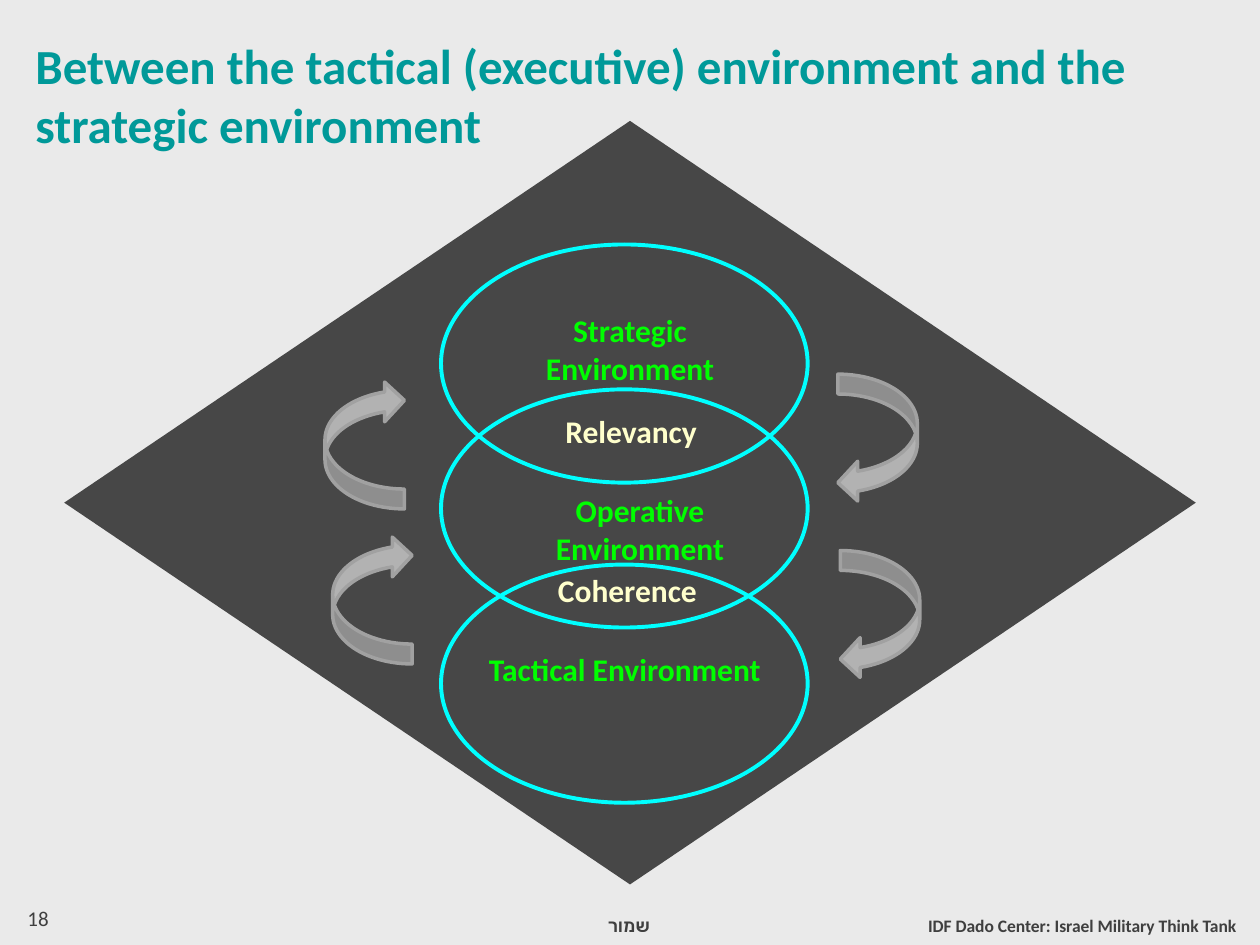
from pptx import Presentation
from pptx.dml.color import RGBColor
from pptx.enum.shapes import MSO_SHAPE
from pptx.enum.text import MSO_ANCHOR, PP_ALIGN
from pptx.util import Pt

DIAMOND = MSO_SHAPE.DIAMOND
ELLIPSE = MSO_SHAPE.OVAL
CURVED_ARROW = MSO_SHAPE.CURVED_LEFT_ARROW
LEFT, CENTER, RIGHT = PP_ALIGN.LEFT, PP_ALIGN.CENTER, PP_ALIGN.RIGHT
TOP = MSO_ANCHOR.TOP

FONT = "Calibri"
TEAL, GREEN, CREAM, CYAN = "009999", "00FF00", "FFFFCC", "00FFFF"
DARK, INK, SILVER, GRAY, PAPER = "474747", "3F3F3F", "B2B2B2", "A1A1A1", "EAEAEA"
LABEL_HEIGHT = 28.8


def color(hex_string):
    return RGBColor.from_string(hex_string)


def write(frame, text, size, ink, align=LEFT, bold=True):
    frame.word_wrap = True
    frame.vertical_anchor = TOP
    paragraph = frame.paragraphs[0]
    paragraph.alignment = align
    run = paragraph.add_run()
    run.text = text
    run.font.name = FONT
    run.font.size = Pt(size)
    run.font.bold = bold
    run.font.color.rgb = color(ink)


def add_label(slide, x, y, width, text, size, ink, align, bold=True):
    label = slide.shapes.add_textbox(Pt(x), Pt(y), Pt(width), Pt(LABEL_HEIGHT))
    write(label.text_frame, text, size, ink, align, bold)


def add_figure(slide, kind, x, y, width, height, fill=None, line=None, weight=0):
    figure = slide.shapes.add_shape(kind, Pt(x), Pt(y), Pt(width), Pt(height))
    figure.shadow.inherit = False
    if fill:
        figure.fill.solid()
        figure.fill.fore_color.rgb = color(fill)
    else:
        figure.fill.background()
    if line:
        figure.line.color.rgb = color(line)
        figure.line.width = Pt(weight)
    else:
        figure.line.fill.background()
    return figure


def add_title(slide, x, y, width, height):
    title = slide.shapes.title
    title.left, title.top, title.width, title.height = map(Pt, (x, y, width, height))
    write(title.text_frame,
          "Between the tactical (executive) environment and the strategic environment",
          28, TEAL)
    title.text_frame.paragraphs[0].line_spacing = 1.0


def add_environments(slide, x, y, width, height):
    add_figure(slide, DIAMOND, x, y, width, height, DARK)

    for dy in (70.6, 253.5, 153.4):
        add_figure(slide, ELLIPSE, x + 215.3, y + dy, 209.5, 136.1, None, CYAN, 2.25)

    for dx, dy, label_width, text, ink, align in (
        (238.3, 105.1, 170, "Strategic Environment", GREEN, CENTER),
        (232.6, 298.8, 175.7, "Tactical Environment", GREEN, CENTER),
        (238.3, 208.1, 181.4, "Operative Environment", GREEN, CENTER),
        (266.4, 162.7, 102.2, "Relevancy", CREAM, RIGHT),
        (266.4, 253.5, 102.2, "Coherence", CREAM, RIGHT),
    ):
        add_label(slide, x + dx, y + dy, label_width, text, 18, ink, align)

    for dx, dy, rotation in (
        (442.1, 144.7, 0),
        (443.5, 245.5, 0),
        (149, 148.3, 180),
        (153.4, 236.9, 180),
    ):
        arrow = add_figure(slide, CURVED_ARROW, x + dx, y + dy, 45.4, 73.4,
                           SILVER, GRAY, 2)
        arrow.rotation = rotation


def add_footer(slide, x, y, width):
    add_label(slide, x, y - 5, 167.8, "18", 12, INK, LEFT, False)
    add_label(slide, x + 271.4, y, 98.6, "שמור", 10, INK, RIGHT)
    add_label(slide, x + width - 228.2, y, 228.2,
              "IDF Dado Center: Israel Military Think Tank", 10, INK, RIGHT)


def main():
    deck = Presentation()
    deck.slide_width, deck.slide_height = Pt(720), Pt(540)
    slide = deck.slides.add_slide(deck.slide_layouts[5])
    slide.background.fill.solid()
    slide.background.fill.fore_color.rgb = color(PAPER)
    add_title(slide, 13, 16.6, 683.3, 41)
    add_environments(slide, 36.7, 69.1, 646.6, 436.3)
    add_footer(slide, 8.6, 519.1, 704.9)
    deck.save("out.pptx")


if __name__ == "__main__":
    main()
